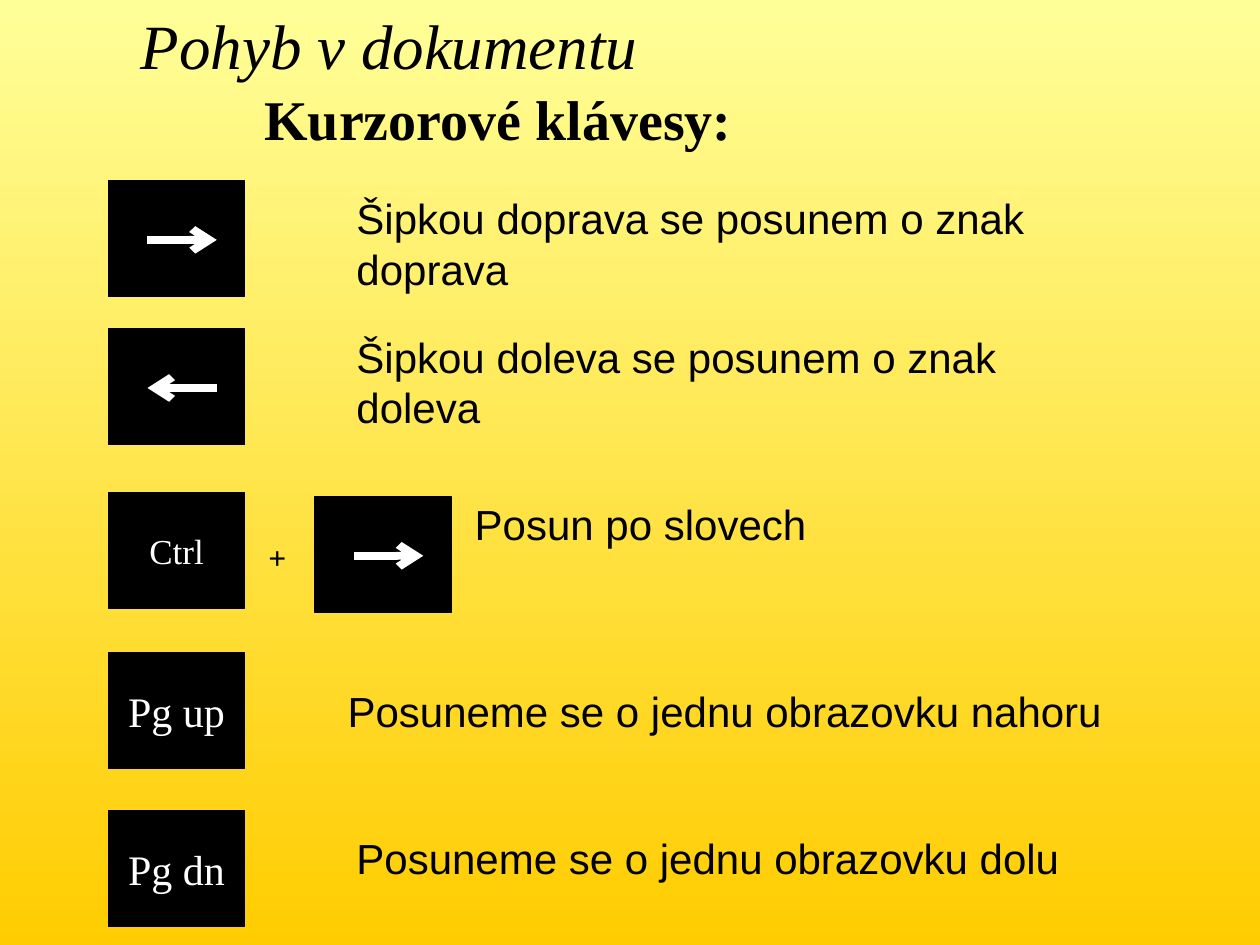
import pptx
import pptx.dml.color
import pptx.enum.dml
import pptx.enum.shapes
import pptx.enum.text
import pptx.oxml
import pptx.oxml.ns
import pptx.util

Pt = pptx.util.Pt
RGBColor = pptx.dml.color.RGBColor
Anchor = pptx.enum.text.MSO_ANCHOR
Align = pptx.enum.text.PP_ALIGN

BLACK = RGBColor(0, 0, 0)
WHITE = RGBColor(255, 255, 255)
LIGHT_YELLOW = RGBColor(0xFF, 0xFF, 0x99)
GOLD = RGBColor(0xFF, 0xCC, 0x00)
SERIF = "Times New Roman"
SANS = "Arial"

KEY_LEFT = 62
KEY_WIDTH = 77.8
KEY_HEIGHT = 66.3
ARROW_INSET = 22.3
ARROW_LENGTH = 39.6
ARROW_DROP = 33.8


def paint_background(page):
    fill = page.background.fill
    fill.gradient()
    fill.gradient_angle = 270
    for stop, position, color in zip(fill.gradient_stops, (0, 1), (LIGHT_YELLOW, GOLD)):
        stop.position = position
        stop.color.rgb = color


def write(frame, text, size=24, font=SANS, color=BLACK, bold=False, italic=False,
          align=Align.LEFT):
    para = frame.paragraphs[0]
    para.alignment = align
    span = para.add_run()
    span.text = text
    span.font.size = Pt(size)
    span.font.name = font
    span.font.color.rgb = color
    span.font.bold = bold
    span.font.italic = italic


def add_text(page, text, left, top, width, height, wrap=True, **style):
    box = page.shapes.add_textbox(Pt(left), Pt(top), Pt(width), Pt(height))
    box.text_frame.word_wrap = wrap
    box.text_frame.auto_size = pptx.enum.text.MSO_AUTO_SIZE.SHAPE_TO_FIT_TEXT
    write(box.text_frame, text, **style)


def add_key(shapes, top, left=KEY_LEFT):
    key = shapes.add_shape(pptx.enum.shapes.MSO_SHAPE.RECTANGLE,
                           Pt(left), Pt(top), Pt(KEY_WIDTH), Pt(KEY_HEIGHT))
    key.shadow.inherit = False
    key.fill.solid()
    key.fill.fore_color.rgb = BLACK
    key.line.color.rgb = BLACK
    key.line.width = Pt(0.75)
    return key


def add_label_key(page, label, top, size=24):
    frame = add_key(page.shapes, top).text_frame
    frame.word_wrap = False
    frame.vertical_anchor = Anchor.MIDDLE
    write(frame, label, size=size, font=SERIF, color=WHITE, align=Align.CENTER)


def add_arrow_key(page, top, left=KEY_LEFT, leftward=False):
    """Group a black key with a white arrow that points right, or left on request."""
    group = page.shapes.add_group_shape()
    add_key(group.shapes, top, left)
    start = left + ARROW_INSET
    end = start + ARROW_LENGTH
    if leftward:
        start, end = end, start
    level = Pt(top + ARROW_DROP)
    arrow = group.shapes.add_connector(pptx.enum.shapes.MSO_CONNECTOR.STRAIGHT,
                                       Pt(start), level, Pt(end), level)
    arrow.line.color.rgb = WHITE
    arrow.line.width = Pt(4.5)
    namespace = pptx.oxml.ns.nsdecls("a")
    arrow.line._get_or_add_ln().append(
        pptx.oxml.parse_xml(f'<a:tailEnd {namespace} type="arrow"/>'))
    arrow._element.spPr.append(pptx.oxml.parse_xml(f"<a:effectLst {namespace}/>"))


def main():
    deck = pptx.Presentation()
    deck.slide_width, deck.slide_height = Pt(720), Pt(540)
    page = deck.slides.add_slide(deck.slide_layouts[6])
    paint_background(page)

    add_text(page, "Pohyb v dokumentu", 73.4, 0, 336, 50.4,
             size=36, font=SERIF, italic=True)
    add_text(page, "Kurzorové klávesy:", 144, 44.6, 486, 45.4,
             size=32, font=SERIF, bold=True)

    add_arrow_key(page, 103.3)
    add_arrow_key(page, 187.9, leftward=True)
    add_label_key(page, "Ctrl", 281.3, size=20)
    add_text(page, "+", 146.2, 303.8, 25.2, 28.8, wrap=False,
             size=18, font=SERIF, bold=True)
    add_arrow_key(page, 283.8, left=180)
    add_label_key(page, "Pg up", 373)
    add_label_key(page, "Pg dn", 463)

    for text, left, top, width, height in (
        ("Šipkou doprava se posunem o znak doprava", 196.6, 106.6, 450, 65.5),
        ("Šipkou doleva se posunem o znak doleva", 196.6, 185.8, 450, 65.5),
        ("Posun po slovech", 264.2, 281.5, 404.6, 36.7),
        ("Posuneme se o jednu obrazovku nahoru", 191.5, 388.1, 500.4, 36.7),
        ("Posuneme se o jednu obrazovku dolu", 196.6, 472.3, 444.2, 36.7),
    ):
        add_text(page, text, left, top, width, height)

    deck.save("out.pptx")


if __name__ == "__main__":
    main()
